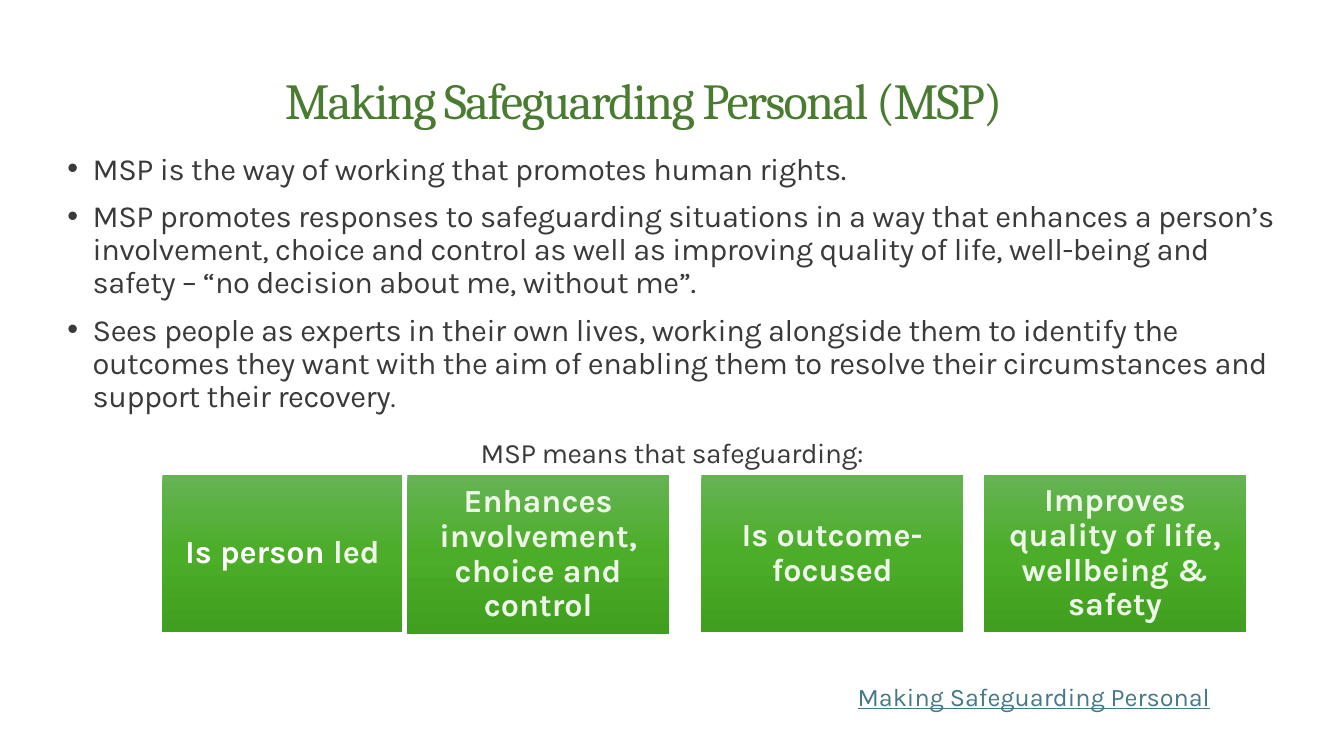
from lxml import etree
from pptx import Presentation
from pptx.dml.color import RGBColor
from pptx.enum import shapes, text
from pptx.oxml import ns
from pptx.util import Pt

TITLE = "Making Safeguarding Personal (MSP)"
BULLETS = [
    [("MSP is the way of working that promotes human rights.", 22)],
    [("MSP promotes responses to safeguarding situations in a way that enhances a person’s "
      "involvement, choice and control as well as improving quality of life, well-being and "
      "safety – “no decision about me, without me”.", 22)],
    [("Sees people as experts in their own lives, working alongside them to identify the "
      "outcomes they want with the aim of enabling them to resolve their circumstances and "
      "support their recovery", 22), (".", 20)],
]
LEAD_IN = "MSP means that safeguarding:"
LINK = "Making Safeguarding Personal"
WHITE, PALE = "FFFFFF", "EEF6E9"
BOXES = [
    (116, 171.5, 112.5, 7, [("Is person ", WHITE), ("led", PALE)]),
    (291, 187, 114, 5, [("Enhances involvement, choice and control", PALE)]),
    (501, 187, 112.5, 5, [("Is outcome-focused", PALE)]),
    (703, 187, 112.5, 5, [("Improves quality of life, wellbeing & safety", PALE)]),
]
BOX_TOP = 339
GRADIENT = [(0, "66B354"), (50, "4BAD28"), (100, "409F1E")]
TITLE_FONT = dict(name="Cambria", size=Pt(36), bold=False)
BODY_FONT = dict(name="Karla")
BOX_FONT = dict(name="Karla", size=Pt(23), bold=True)
LINK_FONT = dict(name="Karla", size=Pt(18), underline=True)
CENTRE = text.PP_ALIGN.CENTER


def rgb(value):
    return RGBColor.from_string(value)


def set_all(target, values):
    for name, value in values.items():
        setattr(target, name, value)


def place(sp, left, top, width, height):
    set_all(sp, dict(left=Pt(left), top=Pt(top), width=Pt(width), height=Pt(height)))


def frame(sp, anchor, **margins):
    tf = sp.text_frame
    set_all(tf, dict(word_wrap=True, auto_size=text.MSO_AUTO_SIZE.NONE, vertical_anchor=anchor))
    set_all(tf, margins)
    return tf


def add_run(p, words, colour, font, spacing=0):
    r = p.add_run()
    r.text = words
    set_all(r.font, font)
    r.font.color.rgb = rgb(colour)
    if spacing:
        r.font._element.set("spc", str(spacing))


def set_bullet(p, mark, indent):
    pPr = p._p.get_or_add_pPr()
    pPr.set("marL", str(Pt(indent)))
    pPr.set("indent", str(-Pt(indent)))
    if mark:
        etree.SubElement(pPr, ns.qn("a:buFont")).set("typeface", "Arial")
        etree.SubElement(pPr, ns.qn("a:buChar")).set("char", mark)
    else:
        etree.SubElement(pPr, ns.qn("a:buNone"))


def fill_gradient(sp):
    sp.fill.gradient()
    sp.fill.gradient_angle = 270
    stops = sp._element.spPr.find(".//" + ns.qn("a:gsLst"))
    stops.clear()
    for position, colour in GRADIENT:
        stop = etree.SubElement(stops, ns.qn("a:gs"), pos=str(position * 1000))
        etree.SubElement(stop, ns.qn("a:srgbClr"), val=colour)


prs = Presentation()
prs.slide_width, prs.slide_height = Pt(960), Pt(540)
s = prs.slides.add_slide(prs.slide_layouts[1])

title = s.shapes.title
place(title, 58, 50.5, 803.5, 36)
p = frame(title, text.MSO_ANCHOR.TOP).paragraphs[0]
set_all(p, dict(alignment=CENTRE, line_spacing=0.9))
add_run(p, TITLE, "497B30", TITLE_FONT, -120)

body = s.placeholders[1]
place(body, 41, 106, 878, 361.5)
tf = frame(body, text.MSO_ANCHOR.TOP)
paragraphs = [(runs, "•", 18, text.PP_ALIGN.LEFT, 10, 0) for runs in BULLETS]
paragraphs[-1] = paragraphs[-1][:5] + (6,)
paragraphs.append(([(LEAD_IN, 20)], None, 0, CENTRE, 12, 0))
for i, (runs, mark, indent, align, before, after) in enumerate(paragraphs):
    p = tf.add_paragraph() if i else tf.paragraphs[0]
    set_bullet(p, mark, indent)
    set_all(p, dict(alignment=align, line_spacing=0.9,
                    space_before=Pt(before if i else 0), space_after=Pt(after)))
    for words, size in runs:
        add_run(p, words, "3A3A3A", dict(BODY_FONT, size=Pt(size)), -30)

for left, width, height, inset, runs in BOXES:
    sp = s.shapes.add_shape(shapes.MSO_SHAPE.RECTANGLE, Pt(left), Pt(BOX_TOP), Pt(width), Pt(height))
    sp.shadow.inherit = False
    fill_gradient(sp)
    sp.line.fill.background()
    sides = ("left", "right", "top", "bottom")
    tf = frame(sp, text.MSO_ANCHOR.MIDDLE, **{"margin_" + side: Pt(inset) for side in sides})
    p = tf.paragraphs[0]
    set_all(p, dict(alignment=CENTRE, line_spacing=0.9))
    for words, colour in runs:
        add_run(p, words, colour, BOX_FONT)

link = s.shapes.add_textbox(Pt(605.5), Pt(483), Pt(278), Pt(29))
add_run(frame(link, text.MSO_ANCHOR.TOP).paragraphs[0], LINK, "467886", LINK_FONT)

prs.save("out.pptx")
